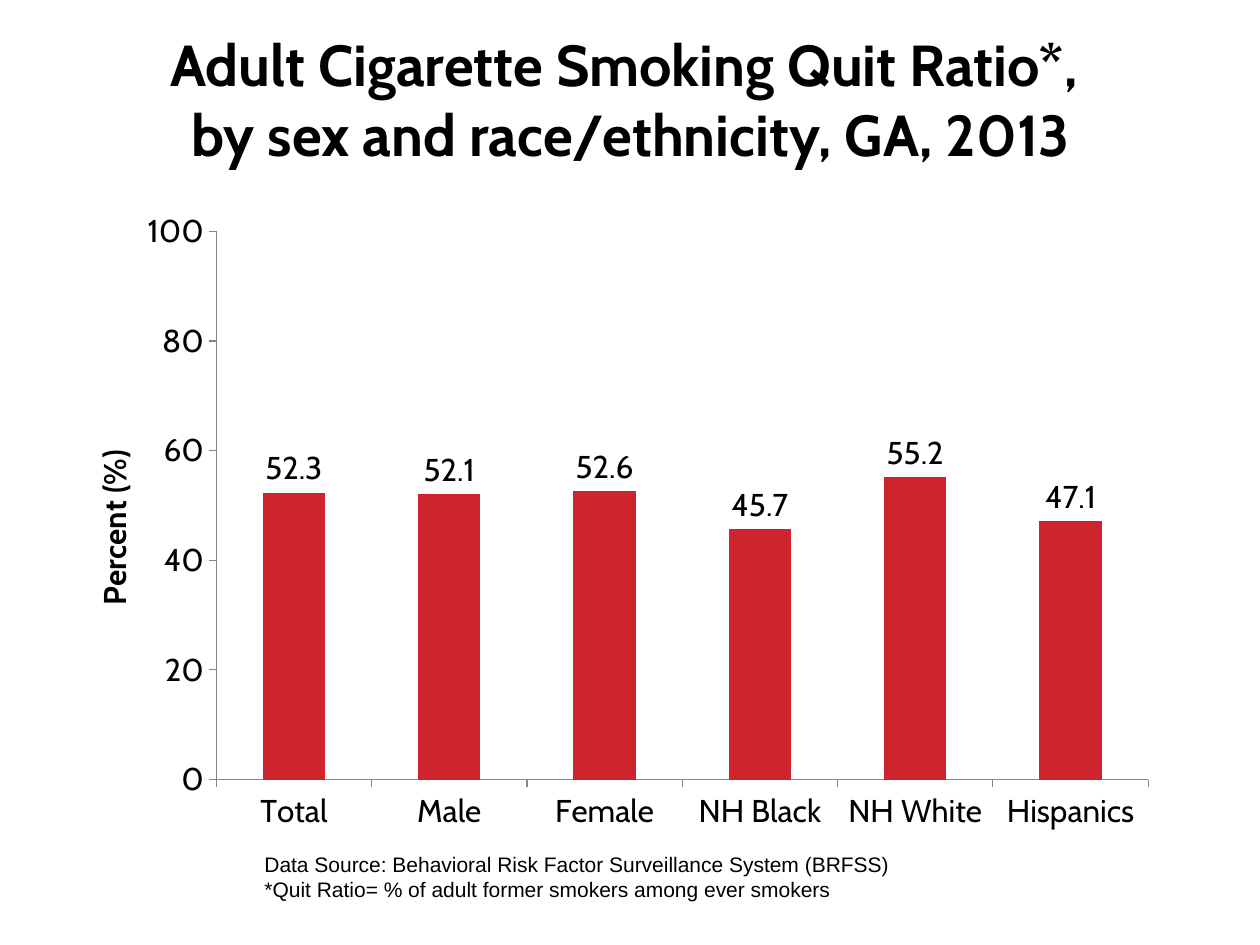
from lxml import etree
from pptx import Presentation
from pptx.chart.data import CategoryChartData
from pptx.dml.color import RGBColor
from pptx.enum.chart import XL_CHART_TYPE, XL_LABEL_POSITION, XL_TICK_MARK
from pptx.enum.text import MSO_ANCHOR, PP_ALIGN
from pptx.oxml import parse_xml
from pptx.oxml.ns import nsdecls, qn
from pptx.util import Inches, Pt

COLUMN = XL_CHART_TYPE.COLUMN_CLUSTERED
OUTSIDE_END = XL_LABEL_POSITION.OUTSIDE_END
TICK_OUT, TICK_NONE = XL_TICK_MARK.OUTSIDE, XL_TICK_MARK.NONE
MIDDLE, CENTER = MSO_ANCHOR.MIDDLE, PP_ALIGN.CENTER

COLORS = {"text": "000000", "bar": "CE242E", "axis": "868686"}
TITLE = "Adult Cigarette Smoking Quit Ratio*, \vby sex and race/ethnicity, GA, 2013"
QUIT_RATIOS = {
    "Total": 52.3, "Male": 52.1, "Female": 52.6,
    "NH Black": 45.7, "NH White": 55.2, "Hispanics": 47.1,
}
NOTES = [
    "Data Source: Behavioral Risk Factor Surveillance System (BRFSS)",
    "*Quit Ratio= % of adult former smokers among ever smokers",
]


def color(name):
    return RGBColor.from_string(COLORS[name])


def format_font(font, name, size, bold=False):
    font.name, font.size, font.bold = name, Pt(size), bold
    font.color.rgb = color("text")


def set_layout(element, **settings):
    """Place a chart part by fractions of the chart's size."""
    for old in element.findall(qn("c:layout")):
        element.remove(old)
    layout = parse_xml(f"<c:layout {nsdecls('c')}><c:manualLayout/></c:layout>")
    for tag, value in settings.items():
        etree.SubElement(layout[0], qn(f"c:{tag}")).set("val", str(value))
    text = element.find(qn("c:tx"))
    element.insert(0 if text is None else element.index(text) + 1, layout)


def add_title(slide, left, top, width, height):
    title = slide.shapes.title
    title.left, title.top, title.width, title.height = left, top, width, height
    frame = title.text_frame
    frame.text = TITLE
    frame.word_wrap = True
    frame.vertical_anchor = MIDDLE
    paragraph = frame.paragraphs[0]
    paragraph.alignment = CENTER
    for run in paragraph.runs:
        format_font(run.font, "Cabin", 33, bold=True)


def add_quit_ratio_chart(slide, left, top, width, height):
    data = CategoryChartData(number_format="0.0")
    data.categories = list(QUIT_RATIOS)
    data.add_series("Series 1", list(QUIT_RATIOS.values()))
    chart = slide.shapes.add_chart(COLUMN, left, top, width, height, data).chart
    chart.has_title = False
    chart.has_legend = False
    format_font(chart.font, "Cabin", 18)

    # Columns and their labels
    plot = chart.plots[0]
    plot.gap_width = 150
    plot.vary_by_categories = False
    fill = plot.series[0].format.fill
    fill.solid()
    fill.fore_color.rgb = color("bar")
    plot.has_data_labels = True
    labels = plot.data_labels
    labels.show_value = True
    labels.position = OUTSIDE_END
    format_font(labels.font, "Cabin", 18)

    # Axes
    for axis in (chart.category_axis, chart.value_axis):
        axis.has_major_gridlines = False
        axis.major_tick_mark = TICK_OUT
        axis.minor_tick_mark = TICK_NONE
        axis.format.line.color.rgb = color("axis")
        axis.format.line.width = Pt(0.75)
        format_font(axis.tick_labels.font, "Cabin", 18)
    value_axis = chart.value_axis
    value_axis.minimum_scale, value_axis.maximum_scale = 0, 100
    value_axis.major_unit = 20
    value_axis.tick_labels.number_format = "0"
    value_axis.tick_labels.number_format_is_linked = False
    axis_title = value_axis.axis_title
    axis_title.text_frame.text = "Percent (%)"
    format_font(axis_title.text_frame.paragraphs[0].runs[0].font, "Cabin", 18, bold=True)

    # Positions inside the chart
    set_layout(axis_title._element, xMode="edge", yMode="edge", x=0.03, y=0.38)
    plot_area = chart._chartSpace.chart.plotArea
    set_layout(plot_area, layoutTarget="inner", xMode="edge", yMode="edge",
               x=0.146, y=0.05, w=0.833, h=0.85)


def add_notes(slide, left, top, width, height):
    frame = slide.shapes.add_textbox(left, top, width, height).text_frame
    frame.word_wrap = True
    frame.text = "\n".join(NOTES)
    for paragraph in frame.paragraphs:
        format_font(paragraph.runs[0].font, "Arial", 12)


def main():
    presentation = Presentation()
    presentation.slide_width = Inches(10)
    presentation.slide_height = Inches(7.5)
    title_only = presentation.slide_layouts[5]
    slide = presentation.slides.add_slide(title_only)
    add_title(slide, Inches(0.17), Inches(0.01), Inches(9.67), Inches(1.54))
    add_quit_ratio_chart(slide, Inches(0.42), Inches(1.58), Inches(8.88), Inches(5.12))
    add_notes(slide, Inches(2), Inches(6.71), Inches(5.42), Inches(0.5))
    presentation.save("out.pptx")


if __name__ == "__main__":
    main()
